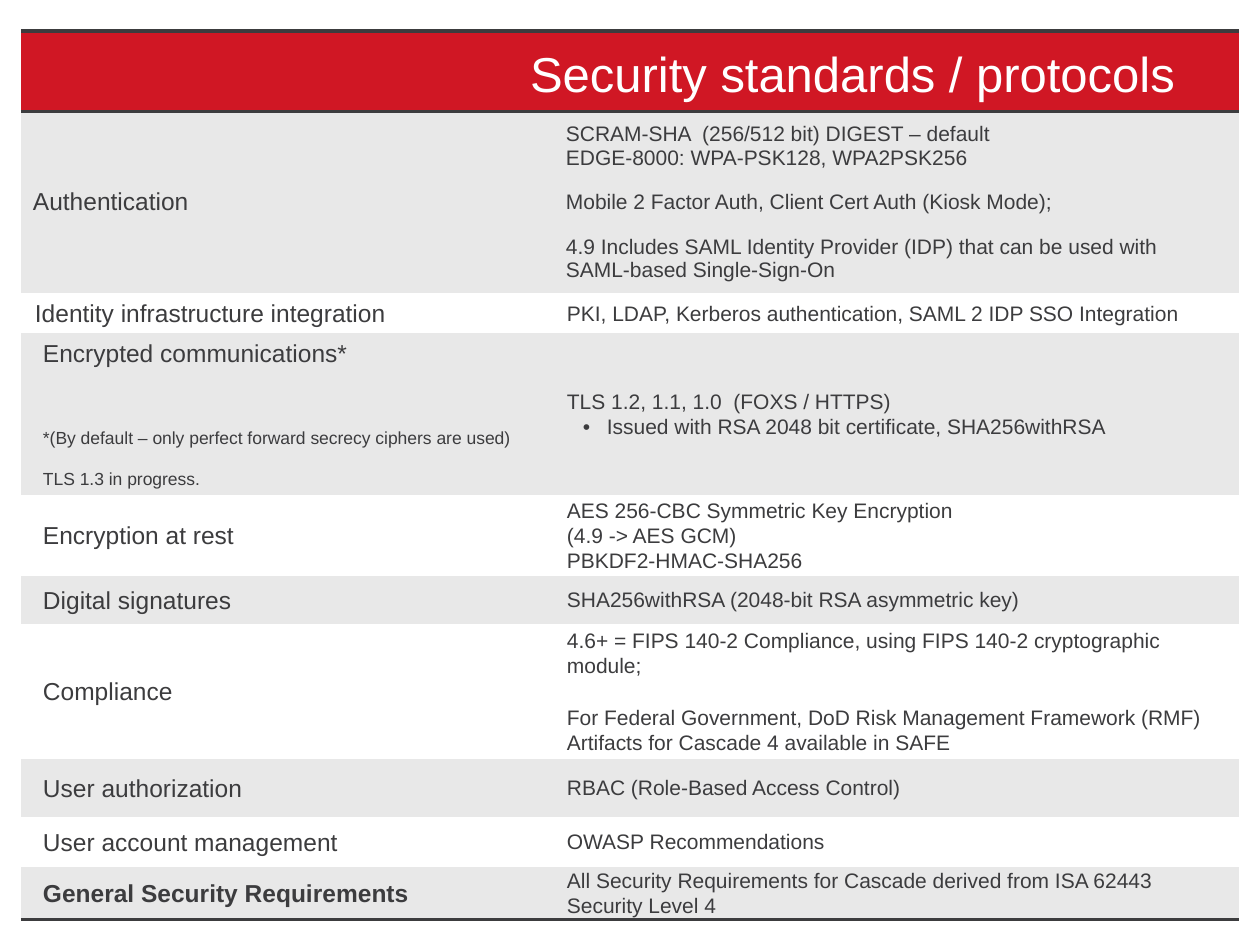
from dataclasses import dataclass

from lxml import etree
from pptx import Presentation
from pptx import util as u
from pptx.dml.color import RGBColor
from pptx.enum import text
from pptx.oxml.ns import qn

RED = RGBColor(0xD0, 0x17, 0x24)
INK = RGBColor(0x3C, 0x3C, 0x3E)
GREY = RGBColor(0xE8, 0xE8, 0xE8)
WHITE = RGBColor(0xFF, 0xFF, 0xFF)
FONT = "Arial"
NO_STYLE = "{2D5ABB26-0587-4C30-8999-92F81FD0307C}"


@dataclass
class Line:
    words: str
    size: int = 12
    before: int = 0
    bold: bool = False
    bullet: bool = False


@dataclass
class Row:
    height: int
    topic: list
    details: list
    topic_indent: int = 16
    detail_indent: int = 39
    margins: tuple = (6, 0)
    spacing: float = 1.07


TITLE = "Security standards / protocols"
HEADER_HEIGHT = 81
COLUMNS = (501, 717)
LEFT, TOP = 21, 31
ROWS = [
    Row(181, [Line("Authentication", 14)], [
        Line("SCRAM-SHA  (256/512 bit) DIGEST – default"),
        Line("EDGE-8000: WPA-PSK128, WPA2PSK256"),
        Line("Mobile 2 Factor Auth, Client Cert Auth (Kiosk Mode);", before=12),
        Line("4.9 Includes SAML Identity Provider (IDP) that can be used with "
             "SAML-based Single-Sign-On", before=12),
    ], topic_indent=0, detail_indent=32, margins=(12, 6), spacing=1.0),
    Row(40, [Line("Identity infrastructure integration", 14)],
        [Line("PKI, LDAP, Kerberos authentication, SAML 2 IDP SSO Integration")],
        topic_indent=8),
    Row(162, [
        Line("Encrypted communications*", 14),
        Line("*(By default – only perfect forward secrecy ciphers are used)", 10, before=34),
        Line("TLS 1.3 in progress.", 10, before=12),
    ], [
        Line("TLS 1.2, 1.1, 1.0  (FOXS / HTTPS)"),
        Line("Issued with RSA 2048 bit certificate, SHA256withRSA", bullet=True),
    ]),
    Row(81, [Line("Encryption at rest", 14)], [
        Line("AES 256-CBC Symmetric Key Encryption"),
        Line("(4.9 -> AES GCM)"),
        Line("PBKDF2-HMAC-SHA256"),
    ]),
    Row(48, [Line("Digital signatures", 14)],
        [Line("SHA256withRSA (2048-bit RSA asymmetric key)")]),
    Row(135, [Line("Compliance", 14)], [
        Line("4.6+ = FIPS 140-2 Compliance, using FIPS 140-2 cryptographic module;"),
        Line("For Federal Government, DoD Risk Management Framework (RMF) "
             "Artifacts for Cascade 4 available in SAFE", before=15),
    ]),
    Row(58, [Line("User authorization", 14)], [Line("RBAC (Role-Based Access Control)")]),
    Row(50, [Line("User account management", 14)], [Line("OWASP Recommendations")]),
    Row(53, [Line("General Security Requirements", 14, bold=True)],
        [Line("All Security Requirements for Cascade derived from ISA 62443 Security Level 4")]),
]


def px(value):
    return u.Emu(round(value * 914400 / 126))


def paint(cell, color):
    cell.fill.solid()
    cell.fill.fore_color.rgb = color


def add_border(cell, sides):
    properties = cell._tc.get_or_add_tcPr()
    for position, side in enumerate(sides):
        line = etree.Element(qn(f"a:ln{side}"), w=str(u.Pt(2)))
        fill = etree.SubElement(line, qn("a:solidFill"))
        etree.SubElement(fill, qn("a:srgbClr"), val=str(INK))
        properties.insert(position, line)


def write_lines(cell, lines, indent, row):
    across, down = row.margins
    cell.margin_left = cell.margin_right = px(across)
    cell.margin_top = cell.margin_bottom = px(down)
    cell.vertical_anchor = text.MSO_ANCHOR.MIDDLE
    frame = cell.text_frame
    frame.text = "\n".join(line.words for line in lines)
    for para, line in zip(frame.paragraphs, lines):
        properties = para._p.get_or_add_pPr()
        properties.set("marL", str(px(indent + 40 if line.bullet else indent)))
        properties.set("indent", str(px(-24 if line.bullet else 0)))
        if line.bullet:
            etree.SubElement(properties, qn("a:buFont"), typeface=FONT)
            etree.SubElement(properties, qn("a:buChar"), char="•")
        para.line_spacing = row.spacing
        if line.before:
            para.space_before = u.Pt(line.before)
        for span in para.runs:
            style_span(span, line.size, INK, line.bold)


def style_span(span, size, color, bold=False):
    span.font.name = FONT
    span.font.size = u.Pt(size)
    span.font.bold = bold
    span.font.color.rgb = color


def add_standards_table(page):
    heights = [HEADER_HEIGHT] + [row.height for row in ROWS]
    frame = page.shapes.add_table(len(heights), len(COLUMNS), px(LEFT), px(TOP),
                                  px(sum(COLUMNS)), px(sum(heights)))
    table = frame.table
    table.first_row = table.horz_banding = False
    next(frame._element.iter(qn("a:tableStyleId"))).text = NO_STYLE
    for column, width in zip(table.columns, COLUMNS):
        column.width = px(width)
    for table_row, height in zip(table.rows, heights):
        table_row.height = px(height)

    table.cell(0, 0).merge(table.cell(0, 1))
    for column in range(len(COLUMNS)):
        paint(table.cell(0, column), RED)
        add_border(table.cell(0, column), "TB")
        add_border(table.cell(len(ROWS), column), "B")
    for number, row in enumerate(ROWS, 1):
        contents = ((row.topic, row.topic_indent), (row.details, row.detail_indent))
        for column, (lines, indent) in enumerate(contents):
            cell = table.cell(number, column)
            paint(cell, GREY if number % 2 else WHITE)
            write_lines(cell, lines, indent, row)


def add_title(page):
    box = page.shapes.add_textbox(px(402), px(37), px(785), px(72))
    box.text_frame.word_wrap = True
    box.text_frame.text = TITLE
    para = box.text_frame.paragraphs[0]
    para.alignment = text.PP_ALIGN.RIGHT
    style_span(para.runs[0], 28, WHITE)


def main():
    deck = Presentation()
    deck.slide_width, deck.slide_height = px(1260), px(945)
    page = deck.slides.add_slide(deck.slide_layouts[6])
    add_standards_table(page)
    add_title(page)
    deck.save("out.pptx")


if __name__ == "__main__":
    main()
